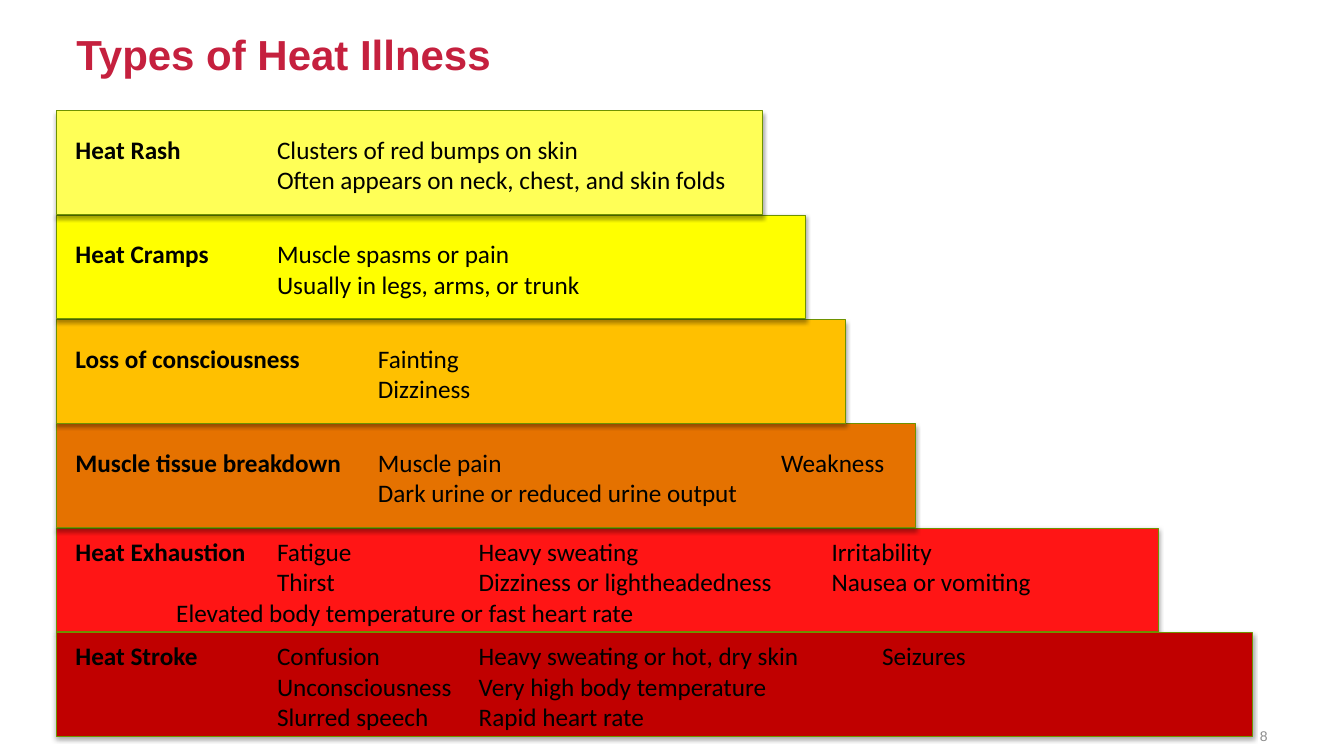
import pptx
import pptx.util
import pptx.dml.color
import pptx.enum.shapes
import pptx.enum.text
import pptx.oxml
import pptx.oxml.ns

WIDTH, HEIGHT = 13.33, 7.5
LEFT, TOP = 0.56, 1.1
ROW, BAR_HEIGHT = 1.035, 1.03
LINE_HEIGHT, INSET = 0.305, 0.1
DRAW_ORDER = [4, 3, 2, 1, 0, 5]

ILLNESSES = [
    ("FFFF57", 7.0, [
        [(0, "Heat Rash"), (2, "Clusters of red bumps on skin")],
        [(2, "Often appears on neck, chest, and skin folds")]]),
    ("FFFF00", 7.43, [
        [(0, "Heat Cramps"), (2, "Muscle spasms or pain")],
        [(2, "Usually in legs, arms, or trunk")]]),
    ("FFC000", 7.83, [
        [(0, "Loss of consciousness"), (3, "Fainting")],
        [(3, "Dizziness")]]),
    ("E57200", 8.52, [
        [(0, "Muscle tissue breakdown"), (3, "Muscle pain"), (7, "Weakness")],
        [(3, "Dark urine or reduced urine output")]]),
    ("FF1515", 10.93, [
        [(0, "Heat Exhaustion"), (2, "Fatigue"), (4, "Heavy sweating"), (7.5, "Irritability")],
        [(2, "Thirst"), (4, "Dizziness or lightheadedness"), (7.5, "Nausea or vomiting")],
        [(1, "Elevated body temperature or fast heart rate")]]),
    ("C00000", 11.86, [
        [(0, "Heat Stroke"), (2, "Confusion"), (4, "Heavy sweating or hot, dry skin"), (8, "Seizures")],
        [(2, "Unconsciousness"), (4, "Very high body temperature")],
        [(2, "Slurred speech"), (4, "Rapid heart rate")]]),
]


def rgb(color):
    return pptx.dml.color.RGBColor.from_string(color)


def inches(*lengths):
    return [pptx.util.Inches(length) for length in lengths]


def add_run(p, text, size=18, font="Calibri", color="000100", bold=False):
    r = p.add_run()
    r.text = text
    r.font.size = pptx.util.Pt(size)
    r.font.name = font
    r.font.color.rgb = rgb(color)
    r.font.bold = bold


def add_box(s, left, top, width, height):
    tf = s.shapes.add_textbox(*inches(left, top, width, height)).text_frame
    tf.word_wrap = True
    tf.vertical_anchor = pptx.enum.text.MSO_ANCHOR.MIDDLE
    return tf


def add_shadow(sp):
    sp.shadow.inherit = False
    effects = sp._element.spPr.find(pptx.oxml.ns.qn("a:effectLst"))
    effects.append(pptx.oxml.parse_xml(
        f'<a:outerShdw {pptx.oxml.ns.nsdecls("a")} blurRad="40000" dist="23000" '
        'dir="5400000" rotWithShape="0"><a:srgbClr val="000000">'
        '<a:alpha val="35000"/></a:srgbClr></a:outerShdw>'))


def add_bar(s, row, width, color):
    sp = s.shapes.add_shape(pptx.enum.shapes.MSO_SHAPE.RECTANGLE,
                            *inches(LEFT, TOP + row * ROW, width, BAR_HEIGHT))
    sp.fill.solid()
    sp.fill.fore_color.rgb = rgb(color)
    sp.line.color.rgb = rgb("6F9200")
    sp.line.width = pptx.util.Pt(0.75)
    add_shadow(sp)


def add_tabs(p, columns):
    stops = "".join(f'<a:tab pos="{pptx.util.Inches(column)}" algn="l"/>' for column in columns)
    p._p.get_or_add_pPr().append(pptx.oxml.parse_xml(
        f'<a:tabLst {pptx.oxml.ns.nsdecls("a")}>{stops}</a:tabLst>'))


def add_symptoms(s, row, width, lines):
    height = 2 * 0.05 + len(lines) * LINE_HEIGHT
    middle = TOP + (row + 0.5) * ROW + 0.015
    tf = add_box(s, LEFT + 0.09, middle - height / 2, width - 0.1, height)
    for i, cells in enumerate(lines):
        p = tf.paragraphs[0] if i == 0 else tf.add_paragraph()
        add_tabs(p, [column for column, text in cells if column])
        for column, text in cells:
            add_run(p, "\t" + text if column else text, bold=not column)


def main():
    prs = pptx.Presentation()
    prs.slide_width, prs.slide_height = inches(WIDTH, HEIGHT)
    s = prs.slides.add_slide(prs.slide_layouts[6])

    p = add_box(s, LEFT + INSET, 0.31, 4.74, 0.53).paragraphs[0]
    p.line_spacing = 0.8
    add_run(p, "Types of Heat Illness", size=30, font="Arial", color="C5203E", bold=True)

    p = add_box(s, 9.56, 7.1, 3.11, 0.4).paragraphs[0]
    p.alignment = pptx.enum.text.PP_ALIGN.RIGHT
    add_run(p, "8", size=10, font="Arial", color="8C8C8C")

    for row in DRAW_ORDER:
        color, width, lines = ILLNESSES[row]
        add_bar(s, row, width, color)
    for row, (color, width, lines) in enumerate(ILLNESSES):
        add_symptoms(s, row, width, lines)

    prs.save("out.pptx")


if __name__ == "__main__":
    main()
